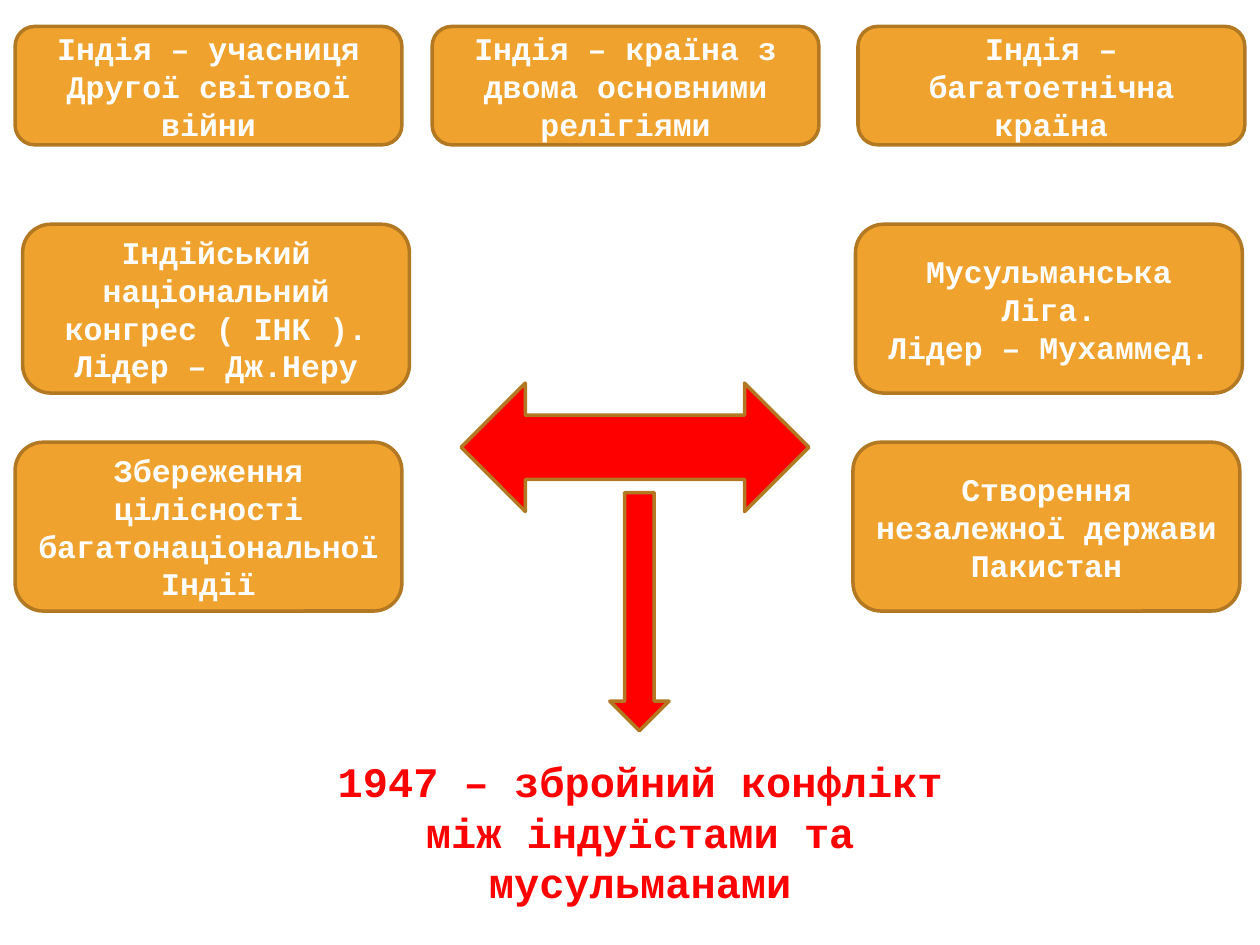
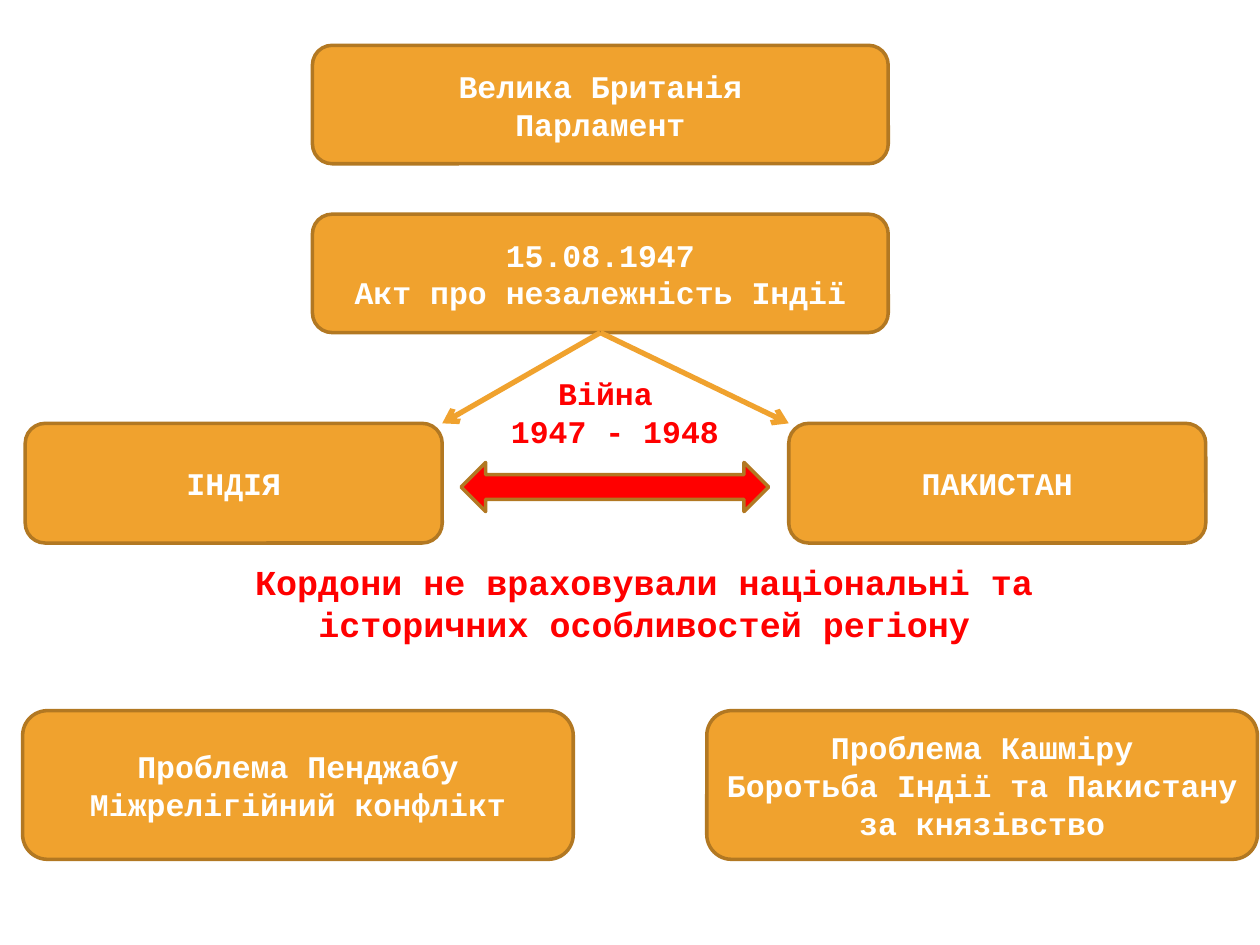
from dataclasses import dataclass

from lxml.etree import SubElement
from pptx import Presentation
from pptx.dml.color import RGBColor as Rgb
from pptx.enum.shapes import MSO_CONNECTOR as Link, MSO_SHAPE as Shape
from pptx.enum.text import MSO_ANCHOR as Anchor, MSO_AUTO_SIZE as Fit, PP_ALIGN as Align
from pptx.oxml.ns import qn
from pptx.util import Inches, Pt

COLUMNS, ROWS = 100, 75
BOTTOM = 2  # connection site


@dataclass(frozen=True)
class Theme:
    font: str = "Courier New"
    amber: Rgb = Rgb(0xF0, 0xA2, 0x2E)
    brown: Rgb = Rgb(0xB2, 0x78, 0x22)
    red: Rgb = Rgb(0xFF, 0x00, 0x00)
    white: Rgb = Rgb(0xFF, 0xFF, 0xFF)
    body: int = 18
    remark: int = 20
    headline: int = 24
    outline: int = 2
    link: int = 3


def write(frame, text, *, font, size, color, anchor=Anchor.TOP, fit=Fit.NONE):
    """Fill a frame with bold centred text, one paragraph a line."""
    frame.word_wrap = True
    frame.auto_size = fit
    frame.vertical_anchor = anchor
    for number, line in enumerate(text.split("\n")):
        paragraph = frame.add_paragraph() if number else frame.paragraphs[0]
        paragraph.alignment = Align.CENTER
        run = paragraph.add_run()
        run.text = line
        run.font.name, run.font.size, run.font.bold = font, Pt(size), True
        run.font.color.rgb = color


class Scheme:
    """Holds the theme and the current slide; lengths are grid columns and rows."""

    def __init__(self, deck, theme):
        self.deck, self.theme, self.slide = deck, theme, None

    def new_slide(self):
        self.slide = self.deck.slides.add_slide(self.deck.slide_layouts[6])

    def x(self, columns):
        return round(self.deck.slide_width * columns / COLUMNS)

    def y(self, rows):
        return round(self.deck.slide_height * rows / ROWS)

    def area(self, left, top, width, height):
        return self.x(left), self.y(top), self.x(width), self.y(height)

    def outlined(self, kind, area, fill):
        shape = self.slide.shapes.add_shape(kind, *self.area(*area))
        shape.shadow.inherit = False
        shape.fill.solid()
        shape.fill.fore_color.rgb = fill
        shape.line.color.rgb = self.theme.brown
        shape.line.width = Pt(self.theme.outline)
        return shape

    def card(self, text, *area):
        card = self.outlined(Shape.ROUNDED_RECTANGLE, area, self.theme.amber)
        write(card.text_frame, text, font=self.theme.font, size=self.theme.body,
              color=self.theme.white, anchor=Anchor.MIDDLE)
        return card

    def arrow(self, kind, *area):
        self.outlined(kind, area, self.theme.red)

    def caption(self, text, *area, size):
        caption = self.slide.shapes.add_textbox(*self.area(*area))
        write(caption.text_frame, text, font=self.theme.font, size=size,
              color=self.theme.red, fit=Fit.SHAPE_TO_FIT_TEXT)

    def branch(self, source, column, row):
        """Arrow from the bottom of a card to a grid point."""
        start = source.left + source.width // 2, source.top + source.height
        branch = self.slide.shapes.add_connector(
            Link.STRAIGHT, *start, self.x(column), self.y(row))
        branch.begin_connect(source, BOTTOM)
        branch.line.color.rgb = self.theme.amber
        branch.line.width = Pt(self.theme.link)
        outline = branch.line._get_or_add_ln()
        SubElement(outline, qn("a:tailEnd"), type="arrow")
        SubElement(outline.getparent(), qn("a:effectLst"))


def build_conflict(scheme):
    scheme.new_slide()
    width = 30.7

    # Starting conditions
    conditions = (
        (1.2, "Індія – учасниця\nДругої світової війни"),
        (34.3, "Індія – країна з двома основними релігіями"),
        (68.1, "Індія – багатоетнічна країна"),
    )
    for left, condition in conditions:
        scheme.card(condition, left, 2.1, width, 9.4)

    # Opposing parties and their goals
    sides = (
        (1.8, 17.8, "Індійський національний конгрес ( ІНК ).\nЛідер – Дж.Неру"),
        (67.9, 17.8, "Мусульманська Ліга.\nЛідер – Мухаммед."),
        (1.2, 35.1, "Збереження цілісності багатонаціональної Індії"),
        (67.7, 35.1, "Створення незалежної держави Пакистан"),
    )
    for left, top, side in sides:
        scheme.card(side, left, top, width, 13.4)

    # Clash and its outcome
    scheme.arrow(Shape.LEFT_RIGHT_ARROW, 36.6, 30.4, 27.6, 10.2)
    scheme.arrow(Shape.DOWN_ARROW, 48.4, 39.1, 4.7, 18.9)
    scheme.caption("1947 – збройний конфлікт між індуїстами та мусульманами",
                   24.4, 59.5, 52.8, 13.1, size=scheme.theme.headline)


def build_partition(scheme):
    scheme.new_slide()

    # Decision in Britain
    decision_left, decision_width, decision_height = 24.8, 45.7, 9.4
    scheme.card("Велика Британія\nПарламент",
                decision_left, 3.6, decision_width, decision_height)
    act = scheme.card("15.08.1947\nАкт про незалежність Індії",
                      decision_left, 17, decision_width, decision_height)

    # Two new states, each reached at its inner top corner
    state_top, state_width = 33.6, 33.1
    for left, state, inner_edge in ((2, "ІНДІЯ", 35.1), (62.6, "ПАКИСТАН", 62.6)):
        scheme.card(state, left, state_top, state_width, 9.5)
        scheme.branch(act, inner_edge, state_top)

    # War between them
    scheme.caption("Війна \n1947 - 1948", 38.2, 29.2, 21.2, 7.1,
                   size=scheme.theme.body)
    scheme.arrow(Shape.LEFT_RIGHT_ARROW, 36.6, 36.7, 24.4, 3.9)

    # Borders and the disputes they left
    scheme.caption("Кордони не враховували національні та історичних особливостей регіону",
                   16.9, 44, 68.5, 7.7, size=scheme.theme.remark)
    disputes = (
        (1.8, "Проблема Пенджабу\nМіжрелігійний конфлікт"),
        (56.1, "Проблема Кашміру\nБоротьба Індії та Пакистану за князівство"),
    )
    for left, dispute in disputes:
        scheme.card(dispute, left, 56.4, 43.7, 11.8)


def main():
    deck = Presentation()
    deck.slide_width, deck.slide_height = Inches(10), Inches(7.5)
    scheme = Scheme(deck, Theme())
    build_conflict(scheme)
    build_partition(scheme)
    deck.save("out.pptx")


if __name__ == "__main__":
    main()
